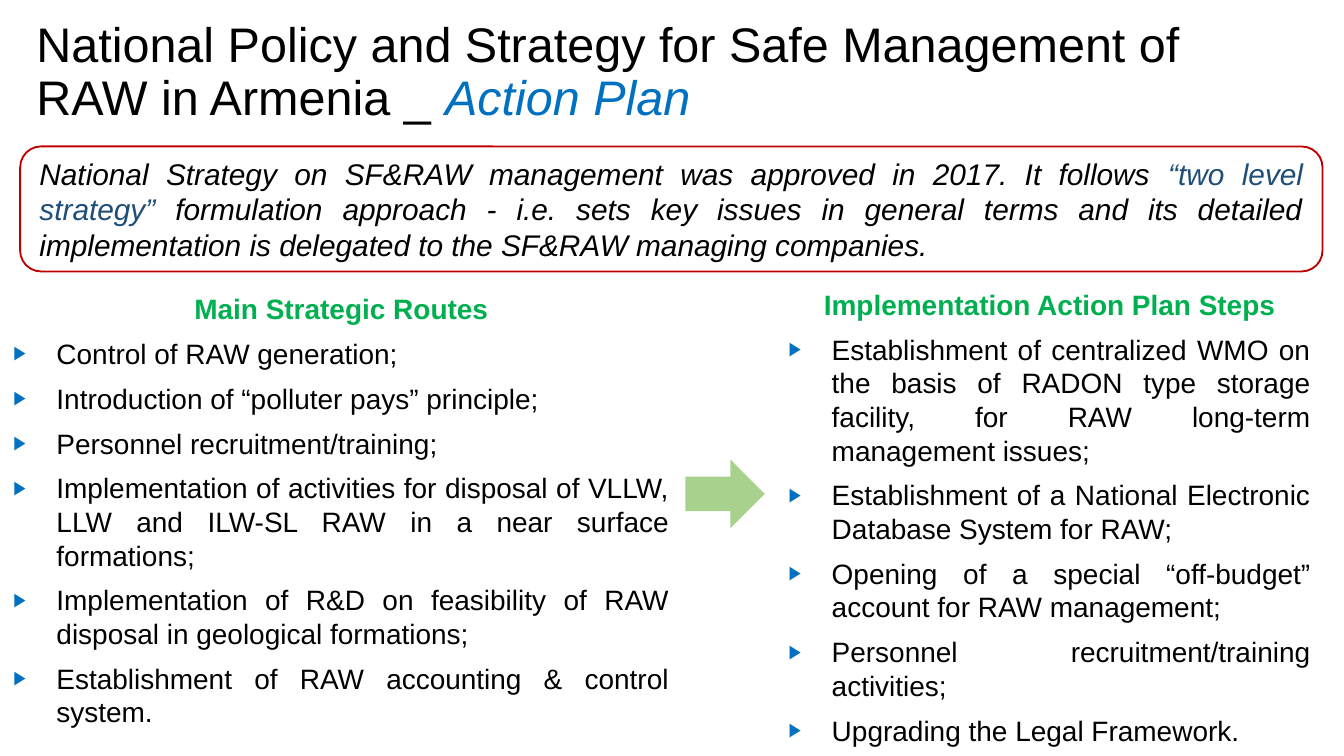
from lxml.etree import SubElement
from pptx import Presentation
from pptx.dml.color import RGBColor
from pptx.enum.shapes import MSO_SHAPE
from pptx.enum.text import MSO_ANCHOR, MSO_AUTO_SIZE, PP_ALIGN
from pptx.oxml.ns import qn
from pptx.util import Inches, Pt

COLORS = {
    "text": "000000",
    "accent": "0070C0",
    "heading": "00B050",
    "quote": "1F4E79",
    "frame": "C00000",
    "arrow": "A9D18E",
}

ROUTES = [
    "Control of RAW generation;",
    "Introduction of “polluter pays” principle;",
    "Personnel recruitment/training;",
    "Implementation of activities for disposal of VLLW, LLW and ILW-SL RAW in a near surface formations;",
    "Implementation of R&D on feasibility of RAW disposal in geological formations;",
    "Establishment of RAW accounting & control system.",
]
STEPS = [
    "Establishment of centralized WMO on the basis of RADON type storage facility, for RAW long-term management issues;",
    "Establishment of a National Electronic Database System for RAW;",
    "Opening of a special “off-budget” account for RAW management;",
    "Personnel recruitment/training activities;",
    "Upgrading the Legal Framework.",
]


class PolicySlide:
    font_name = "Arial"
    list_size = 15
    list_indent = Inches(0.32)
    gap = Pt(6)

    def __init__(self, deck):
        self.page = deck.slides.add_slide(deck.slide_layouts[1])

    def color(self, name):
        return RGBColor.from_string(COLORS[name])

    def place(self, shape, left, top, width, height):
        shape.left, shape.top = Inches(left), Inches(top)
        shape.width, shape.height = Inches(width), Inches(height)

    def format(self, paragraph, size, align, color=None, bold=False, italic=None):
        paragraph.alignment = align
        paragraph.space_before = Pt(0)
        paragraph.font.name = self.font_name
        paragraph.font.size = Pt(size)
        paragraph.font.bold = bold
        paragraph.font.italic = italic
        if color:
            paragraph.font.color.rgb = self.color(color)

    def add_spans(self, paragraph, spans):
        for text, color in spans:
            span = paragraph.add_run()
            span.text = text
            span.font.color.rgb = self.color(color)

    def add_title(self, text, emphasis, area):
        title = self.page.shapes.title
        self.place(title, *area)
        frame = title.text_frame
        frame.auto_size = MSO_AUTO_SIZE.NONE
        frame.vertical_anchor = MSO_ANCHOR.MIDDLE
        paragraph = frame.paragraphs[0]
        self.add_spans(paragraph, [(text, "text"), (emphasis, "accent")])
        paragraph.runs[1].font.italic = True
        self.format(paragraph, 26, PP_ALIGN.LEFT)
        paragraph.line_spacing = 0.9

    def set_bullet(self, paragraph, visible):
        properties = paragraph._p.get_or_add_pPr()
        indent = self.list_indent if visible else 0
        properties.set("marL", str(indent))
        properties.set("indent", str(-indent))
        if not visible:
            SubElement(properties, qn("a:buNone"))
            return
        bullet_color = SubElement(properties, qn("a:buClr"))
        SubElement(bullet_color, qn("a:srgbClr"), val=COLORS["accent"])
        SubElement(properties, qn("a:buSzPct"), val="68000")
        SubElement(properties, qn("a:buFont"), typeface=self.font_name)
        SubElement(properties, qn("a:buChar"), char="▶")

    def fill_list(self, box, heading, items):
        frame = box.text_frame
        frame.word_wrap = True
        frame.vertical_anchor = MSO_ANCHOR.TOP
        title = frame.paragraphs[0]
        title.text = heading
        self.set_bullet(title, False)
        self.format(title, self.list_size, PP_ALIGN.CENTER, "heading", bold=True)
        title.space_after = self.gap
        for item in items:
            paragraph = frame.add_paragraph()
            paragraph.text = item
            paragraph.level = 1
            self.set_bullet(paragraph, True)
            self.format(paragraph, self.list_size, PP_ALIGN.JUSTIFY, "text")
            paragraph.space_after = self.gap

    def add_body_list(self, heading, items, area):
        body = self.page.placeholders[1]
        self.place(body, *area)
        self.fill_list(body, heading, items)
        body.text_frame.auto_size = MSO_AUTO_SIZE.NONE

    def add_box_list(self, heading, items, area):
        box = self.page.shapes.add_textbox(*map(Inches, area))
        self.fill_list(box, heading, items)
        box.text_frame.auto_size = MSO_AUTO_SIZE.SHAPE_TO_FIT_TEXT

    def add_arrow(self, area):
        arrow = self.page.shapes.add_shape(MSO_SHAPE.RIGHT_ARROW, *map(Inches, area))
        arrow.shadow.inherit = False
        arrow.fill.solid()
        arrow.fill.fore_color.rgb = self.color("arrow")
        arrow.line.fill.background()

    def add_callout(self, spans, area):
        callout = self.page.shapes.add_shape(MSO_SHAPE.ROUNDED_RECTANGLE, *map(Inches, area))
        callout.shadow.inherit = False
        callout.fill.background()
        callout.line.color.rgb = self.color("frame")
        callout.line.width = Pt(1)
        frame = callout.text_frame
        frame.word_wrap = True
        frame.vertical_anchor = MSO_ANCHOR.MIDDLE
        paragraph = frame.paragraphs[0]
        self.add_spans(paragraph, spans)
        self.format(paragraph, 16, PP_ALIGN.JUSTIFY, italic=True)
        paragraph.space_after = self.gap


def main():
    deck = Presentation()
    deck.slide_width = Inches(10)
    deck.slide_height = deck.slide_width * 9 // 16
    slide = PolicySlide(deck)
    slide.add_title(
        "National Policy and Strategy for Safe Management of RAW in Armenia _ ",
        "Action Plan",
        (0.17, 0, 9.12, 1.09),
    )
    slide.add_body_list("Main Strategic Routes", ROUTES, (0, 2.12, 5.08, 3.38))
    slide.add_box_list("Implementation Action Plan Steps", STEPS, (5.77, 2.09, 4.08, 3.55))
    slide.add_arrow((5.1, 3.42, 0.59, 0.51))
    slide.add_callout(
        [
            ("National Strategy on SF&RAW management was approved in 2017. It follows ", "text"),
            ("“two level strategy”", "quote"),
            (
                " formulation approach - i.e. sets key issues in general terms and its detailed "
                "implementation is delegated to the SF&RAW managing companies.",
                "text",
            ),
        ],
        (0.15, 1.09, 9.69, 0.93),
    )
    deck.save("out.pptx")


if __name__ == "__main__":
    main()
